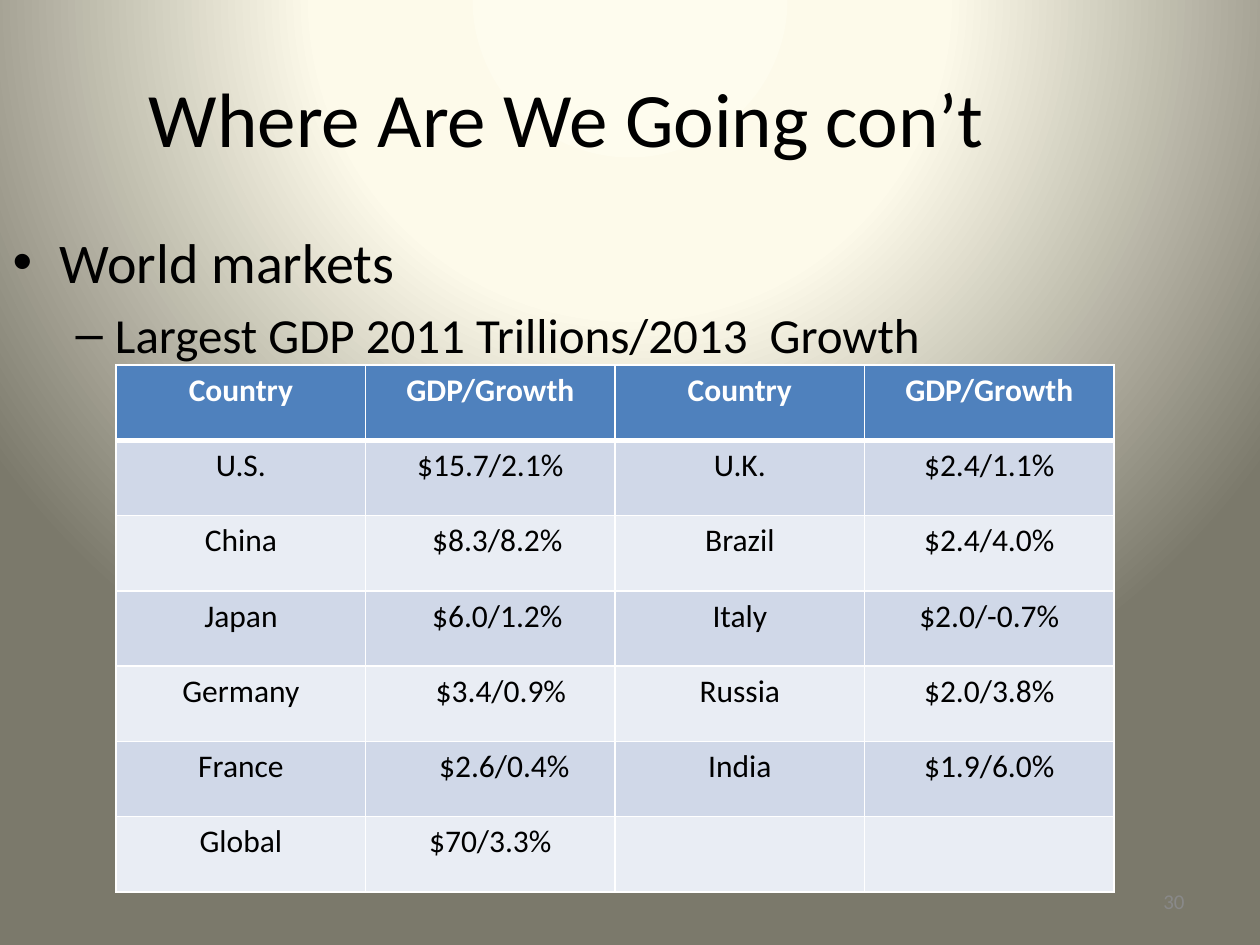
from lxml.etree import SubElement
from pptx import Presentation
from pptx.dml.color import RGBColor
from pptx.enum.text import MSO_ANCHOR, PP_ALIGN
from pptx.oxml import parse_xml
from pptx.oxml.ns import nsdecls, qn
from pptx.util import Pt

TITLE = "Where Are We Going con’t"
OUTLINE = [("World markets", 0, 32), ("Largest GDP 2011 Trillions/2013  Growth", 1, 28)]
MARKETS = [
    ("Country", "GDP/Growth", "Country", "GDP/Growth"),
    ("U.S.", "$15.7/2.1%", "U.K.", "$2.4/1.1%"),
    ("China", "$8.3/8.2%", "Brazil", "$2.4/4.0%"),
    ("Japan", "$6.0/1.2%", "Italy", "$2.0/-0.7%"),
    ("Germany", "$3.4/0.9%", "Russia", "$2.0/3.8%"),
    ("France", "$2.6/0.4%", "India", "$1.9/6.0%"),
    ("Global", "$70/3.3%", "", ""),
]
GROWTH_INDENTS = {"China": 14, "Japan": 14, "Germany": 21, "France": 28}
PAGE_NUMBER = "30"

FONT = "Calibri"
BLACK = RGBColor(0x00, 0x00, 0x00)
WHITE = RGBColor(0xFF, 0xFF, 0xFF)
GRAY = RGBColor(0x89, 0x89, 0x89)
HEADER_BLUE = RGBColor(0x4F, 0x81, 0xBD)
BANDS = [RGBColor(0xE9, 0xED, 0xF4), RGBColor(0xD0, 0xD8, 0xE8)]
GLOW = [
    (0, RGBColor(0xFE, 0xFC, 0xEE)),
    (40, RGBColor(0xFD, 0xFA, 0xEA)),
    (100, RGBColor(0x7B, 0x79, 0x6B)),
]

PX = 914400 // 126
CELL_MARGIN = 13


def px(length):
    return length * PX


def place(box, left, top, width, height):
    box.left, box.top, box.width, box.height = map(px, (left, top, width, height))


def style(para, size, color, bold=False):
    for span in para.runs:
        span.font.name = FONT
        span.font.size = Pt(size)
        span.font.bold = bold
        span.font.color.rgb = color


def paint_background(page):
    page.background.fill.gradient()
    old = next(page.element.iter(qn("a:gradFill")))
    stops = "".join(
        f'<a:gs pos="{stop * 1000}"><a:srgbClr val="{color}"/></a:gs>'
        for stop, color in GLOW
    )
    glow = parse_xml(
        f'<a:gradFill rotWithShape="1" {nsdecls("a")}><a:gsLst>{stops}</a:gsLst>'
        '<a:path path="circle"><a:fillToRect l="50000" t="-80000" r="50000" b="180000"/>'
        "</a:path></a:gradFill>"
    )
    old.getparent().replace(old, glow)


def set_borders(cell, bottom):
    properties = cell._tc.get_or_add_tcPr()
    for index, (side, width) in enumerate([("L", 1), ("R", 1), ("T", 1), ("B", bottom)]):
        line = properties.makeelement(qn(f"a:ln{side}"), {"w": str(Pt(width))})
        fill = SubElement(line, qn("a:solidFill"))
        SubElement(fill, qn("a:srgbClr"), val=str(WHITE))
        properties.insert(index, line)


def add_market_table(page):
    rows, columns = len(MARKETS), len(MARKETS[0])
    frame = page.shapes.add_table(rows, columns, px(116), px(365), px(998), px(527))
    table = frame.table
    for row_index, values in enumerate(MARKETS):
        header = row_index == 0
        for column_index, value in enumerate(values):
            cell = table.cell(row_index, column_index)
            cell.text_frame.text = value
            indent = GROWTH_INDENTS.get(values[0], 0) if column_index == 1 else 0
            cell.margin_left = px(CELL_MARGIN + indent)
            para = cell.text_frame.paragraphs[0]
            para.alignment = PP_ALIGN.CENTER
            para.font.size = Pt(18)
            style(para, 18, WHITE if header else BLACK, header)
            cell.fill.solid()
            cell.fill.fore_color.rgb = HEADER_BLUE if header else BANDS[row_index % 2]
            set_borders(cell, 3 if header else 1)


def main():
    deck = Presentation()
    deck.slide_width, deck.slide_height = px(1260), px(945)
    page = deck.slides.add_slide(deck.slide_layouts[1])
    paint_background(page)

    title, body = page.shapes.title, page.placeholders[1]
    place(title, 0, 38, 1134, 157)
    title.text_frame.text = TITLE
    title.text_frame.vertical_anchor = MSO_ANCHOR.MIDDLE
    title.text_frame.paragraphs[0].alignment = PP_ALIGN.CENTER
    style(title.text_frame.paragraphs[0], 44, BLACK)

    place(body, 0, 221, 1134, 624)
    body.text_frame.text = "\n".join(text for text, level, size in OUTLINE)
    for para, (text, level, size) in zip(body.text_frame.paragraphs, OUTLINE):
        para.level = level
        style(para, size, BLACK)

    add_market_table(page)

    number = page.shapes.add_textbox(px(903), px(876), px(294), px(50))
    number.text_frame.word_wrap = True
    number.text_frame.vertical_anchor = MSO_ANCHOR.MIDDLE
    number.text_frame.text = PAGE_NUMBER
    number.text_frame.paragraphs[0].alignment = PP_ALIGN.RIGHT
    style(number.text_frame.paragraphs[0], 12, GRAY)

    deck.save("out.pptx")


if __name__ == "__main__":
    main()
